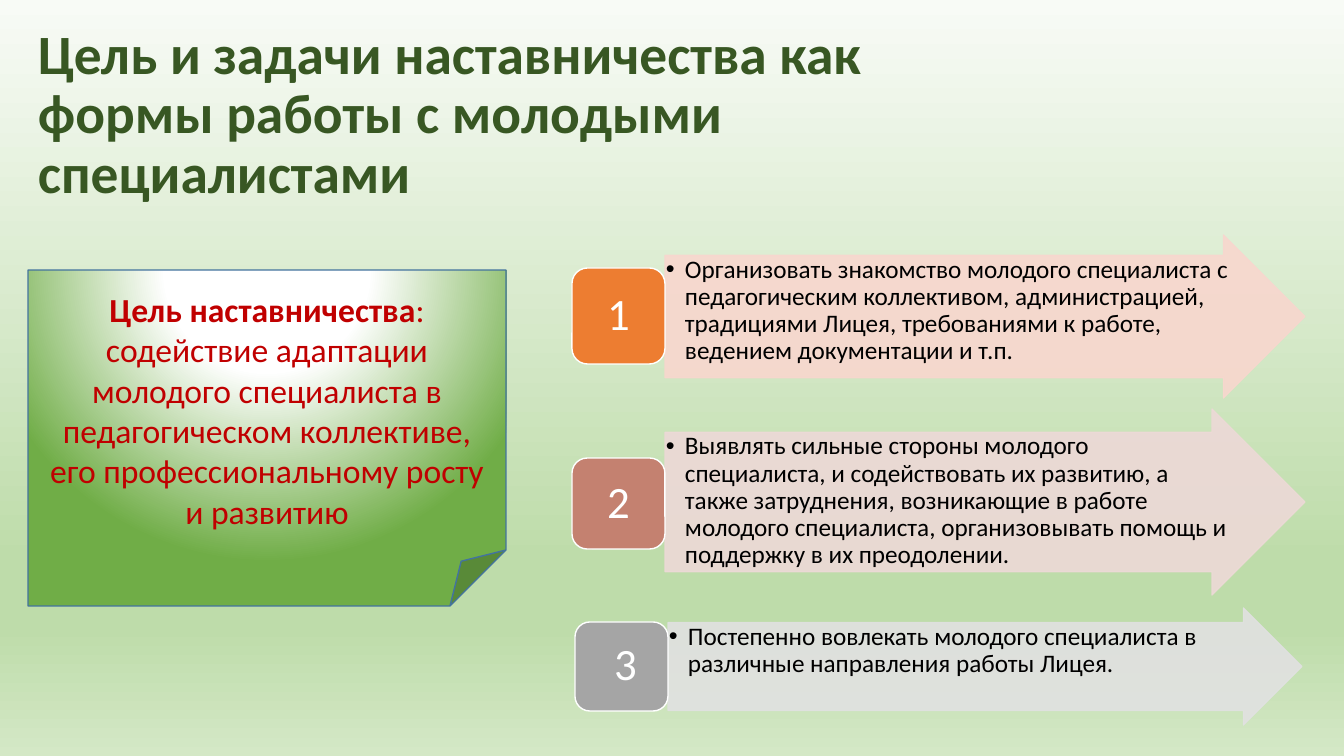
from lxml.etree import SubElement
from pptx import Presentation
from pptx.dml.color import RGBColor
from pptx.enum.shapes import MSO_SHAPE as Shape
from pptx.enum.text import MSO_ANCHOR as Anchor, PP_ALIGN as Align
from pptx.oxml.ns import qn
from pptx.util import Emu, Pt

PX_PER_INCH = 100.8
FONT = "Calibri"
COLORS = {
    "title": "385723",
    "goal_text": "C00000",
    "goal_line": "43739E",
    "black": "000000",
    "white": "FFFFFF",
    "green": "70AD47",
    "sky": "F8FBF6",
    "meadow": "BEDCAA",
    "ground": "D4E8C6",
    "orange": "ED7D31",
    "orange_pale": "F8D7CE",
    "rose": "C48170",
    "rose_pale": "EDD9D7",
    "gray": "A5A5A5",
    "gray_pale": "E1E1E1",
}
TITLE = "Цель и задачи наставничества как формы работы с молодыми специалистами"
GOAL_HEAD = "Цель наставничества"
GOAL = ("содействие адаптации молодого специалиста в педагогическом коллективе, "
        "его профессиональному росту и развитию")
# number, square and arrow colours, left, (square top, height),
# (arrow top, width, height), left inset of the number, text
TASKS = [
    ("1", "orange", "orange_pale", 572, (268, 96), (235, 640, 163), 0,
     "Организовать знакомство молодого специалиста с педагогическим коллективом, "
     "администрацией, традициями Лицея, требованиями к работе, ведением "
     "документации и т.п."),
    ("2", "rose", "rose_pale", 572, (458, 91), (409, 640, 186), 0,
     "Выявлять сильные стороны молодого специалиста, и содействовать их развитию, "
     "а также затруднения, возникающие в работе молодого специалиста, "
     "организовывать помощь и поддержку в их преодолении."),
    ("3", "gray", "gray_pale", 575, (622, 89), (608, 634, 117), 8,
     "Постепенно вовлекать молодого специалиста в различные направления "
     "работы Лицея."),
]
SQUARE_WIDTH = 93
BULLET_INDENT = 19


def px(length):
    return Emu(round(length * 914400 / PX_PER_INCH))


def rgb(name):
    return RGBColor.from_string(COLORS[name])


def paint_gradient(fill, owner, stops, focus=None):
    """Fill with stops running downwards, or around the focus rectangle."""
    fill.gradient()
    gradient = next(owner.element.iter(qn("a:gradFill")))
    gradient.clear()
    stop_list = SubElement(gradient, qn("a:gsLst"))
    for percent, name in stops:
        stop = SubElement(stop_list, qn("a:gs"), pos=str(percent * 1000))
        SubElement(stop, qn("a:srgbClr"), val=COLORS[name])
    if focus:
        circle = SubElement(gradient, qn("a:path"), path="circle")
        sides = {side: str(percent * 1000) for side, percent in zip("ltrb", focus)}
        SubElement(circle, qn("a:fillToRect"), **sides)
    else:
        SubElement(gradient, qn("a:lin"), ang="5400000", scaled="0")


def set_frame(frame, anchor, margins=None):
    frame.word_wrap = True
    frame.vertical_anchor = anchor
    if margins:
        (frame.margin_left, frame.margin_top,
         frame.margin_right, frame.margin_bottom) = map(px, margins)


def format_para(para, size, color, align, spacing=None):
    para.alignment = align
    para.line_spacing = spacing
    for span in para.runs:
        span.font.name = FONT
        span.font.size = Pt(size)
        span.font.color.rgb = rgb(color)


def add_box(page, kind, bounds, line, fill=None):
    box = page.shapes.add_shape(kind, *map(px, bounds))
    box.shadow.inherit = False
    if fill:
        box.fill.solid()
        box.fill.fore_color.rgb = rgb(fill)
    box.line.color.rgb = rgb(line)
    box.line.width = Pt(1)
    return box


def add_title(page):
    box = page.shapes.add_textbox(*map(px, (28, 21, 990, 190)))
    set_frame(box.text_frame, Anchor.MIDDLE)
    box.text_frame.text = TITLE
    para = box.text_frame.paragraphs[0]
    format_para(para, 39.6, "title", Align.LEFT, 0.9)
    para.runs[0].font.bold = True


def add_goal(page):
    box = add_box(page, Shape.FOLDED_CORNER, (28, 270, 478, 336), "goal_line")
    paint_gradient(box.fill, box, [(0, "white"), (35, "white"), (100, "green")],
                   focus=(50, -80, 50, 180))
    frame = box.text_frame
    set_frame(frame, Anchor.MIDDLE)
    frame.text = GOAL_HEAD
    head = frame.paragraphs[0]
    head.runs[0].font.bold = True
    head.add_run().text = ":"
    frame.add_paragraph().text = GOAL
    for para in frame.paragraphs:
        format_para(para, 24, "goal_text", Align.CENTER)


def add_arrow(page, bounds, color, text):
    arrow = add_box(page, Shape.RIGHT_ARROW, bounds, color, color)
    arrow.adjustments[0], arrow.adjustments[1] = 0.75, 0.5
    for paint in arrow.element.spPr.iter(qn("a:srgbClr")):
        SubElement(paint, qn("a:alpha"), val="90000")
    set_frame(arrow.text_frame, Anchor.TOP, (1, 1, 1, 1))
    arrow.text_frame.text = text
    para = arrow.text_frame.paragraphs[0]
    para.level = 1
    properties = para._p.get_or_add_pPr()
    properties.set("marL", str(px(BULLET_INDENT)))
    properties.set("indent", str(-px(BULLET_INDENT)))
    SubElement(properties, qn("a:buFont"), typeface="Arial")
    SubElement(properties, qn("a:buChar"), char="•")
    format_para(para, 18, "black", Align.LEFT, 0.9)


def add_number(page, bounds, color, number, inset):
    square = add_box(page, Shape.ROUNDED_RECTANGLE, bounds, "white", color)
    set_frame(square.text_frame, Anchor.MIDDLE, (inset, 0, 0, 0))
    square.text_frame.text = number
    format_para(square.text_frame.paragraphs[0], 32, "white", Align.CENTER, 0.9)


def main():
    deck = Presentation()
    deck.slide_width, deck.slide_height = px(1344), px(756)
    page = deck.slides.add_slide(deck.slide_layouts[6])
    paint_gradient(page.background.fill, page,
                   [(0, "sky"), (74, "meadow"), (83, "meadow"), (100, "ground")])
    add_title(page)
    add_goal(page)
    for number, color, pale, left, square, arrow, inset, text in TASKS:
        square_top, square_height = square
        arrow_top, arrow_width, arrow_height = arrow
        add_arrow(page, (left + SQUARE_WIDTH, arrow_top, arrow_width, arrow_height),
                  pale, text)
        add_number(page, (left, square_top, SQUARE_WIDTH, square_height),
                   color, number, inset)
    deck.save("out.pptx")


if __name__ == "__main__":
    main()
